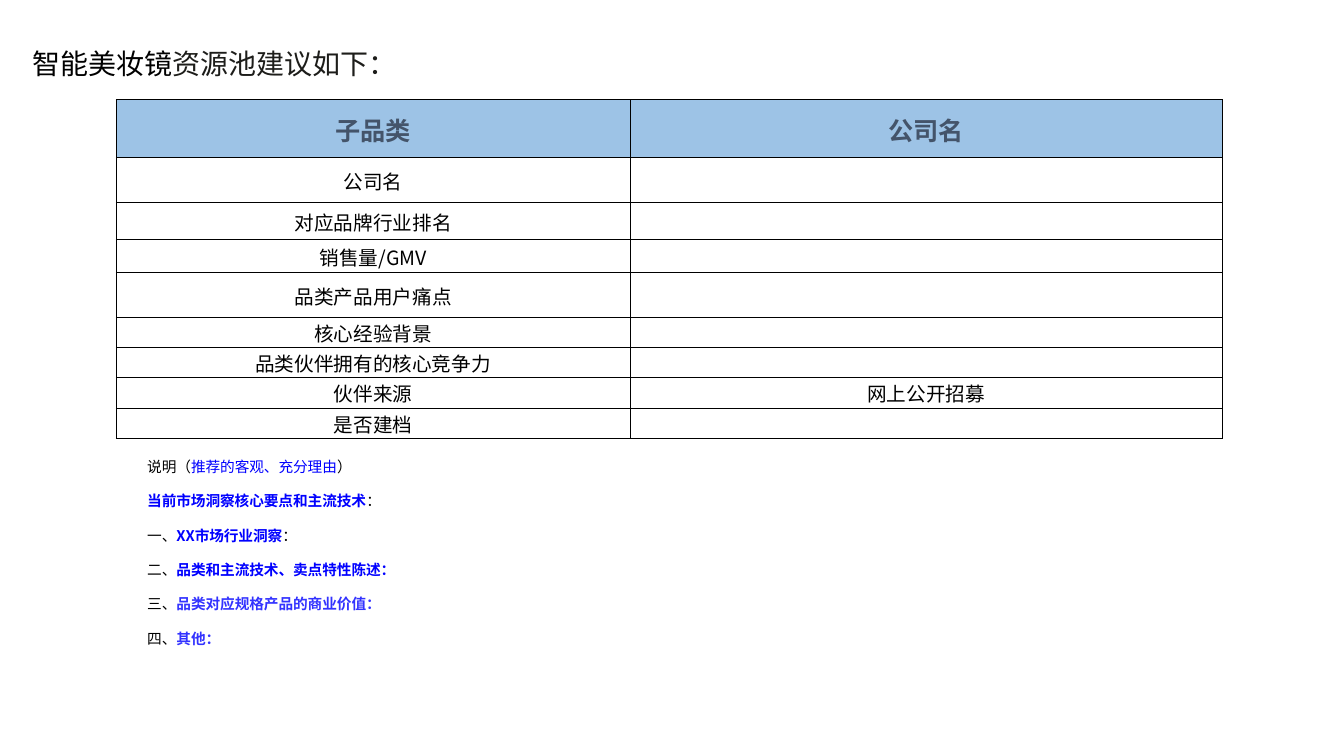
import dataclasses

import pptx
import pptx.dml.color
import pptx.enum.text
import pptx.oxml.ns
import pptx.util
from lxml import etree

Cm = pptx.util.Cm
Pt = pptx.util.Pt
qn = pptx.oxml.ns.qn
FONT = "Noto Sans CJK SC"
COLORS = {
    "black": "000000",
    "ink": "1D1D1A",
    "slate": "44546A",
    "sky": "9DC3E6",
    "white": "FFFFFF",
    "blue": "0000FF",
    "violet": "3333FF",
}


@dataclasses.dataclass
class Span:
    text: str
    color: str = "black"
    bold: bool = False


@dataclasses.dataclass
class Row:
    label: str
    height: float
    value: str = ""


ROWS = [
    Row("子品类", 1.46, "公司名"),
    Row("公司名", 1.14),
    Row("对应品牌行业排名", 0.93),
    Row("销售量/GMV", 0.83),
    Row("品类产品用户痛点", 1.14),
    Row("核心经验背景", 0.75),
    Row("品类伙伴拥有的核心竞争力", 0.75),
    Row("伙伴来源", 0.77, "网上公开招募"),
    Row("是否建档", 0.77),
]
NOTES = [
    [Span("说明（"), Span("推荐的客观、充分理由", "blue"), Span("）")],
    [Span("当前市场洞察核心要点和主流技术", "blue", True), Span("：")],
    [Span("一、"), Span("XX市场行业洞察", "blue", True), Span("：")],
    [Span("二、"), Span("品类和主流技术、卖点特性陈述：", "blue", True)],
    [Span("三、"), Span("品类对应规格产品的商业价值：", "violet", True)],
    [Span("四、"), Span("其他：", "violet", True)],
]


def rgb(name: str) -> pptx.dml.color.RGBColor:
    return pptx.dml.color.RGBColor.from_string(COLORS[name])


def set_font(p, size: float) -> None:
    p.font.size = Pt(size)
    p.font.name = FONT
    props = p._p.pPr.find(qn("a:defRPr"))
    etree.SubElement(props, qn("a:ea")).set("typeface", FONT)


def add_spans(p, spans: list[Span]) -> None:
    for span in spans:
        r = p.add_run()
        r.text = span.text
        r.font.color.rgb = rgb(span.color)
        r.font.bold = span.bold


def clear_margins(tf) -> None:
    tf.margin_left = tf.margin_right = tf.margin_top = tf.margin_bottom = 0
    tf.word_wrap = True


def add_borders(cell) -> None:
    props = cell._tc.get_or_add_tcPr()
    for side in ("lnL", "lnR", "lnT", "lnB"):
        line = etree.SubElement(props, qn(f"a:{side}"), w=str(Pt(0.5)))
        fill = etree.SubElement(line, qn("a:solidFill"))
        etree.SubElement(fill, qn("a:srgbClr"), val=COLORS["black"])


def fill_cell(cell, text: str, header: bool) -> None:
    cell.margin_left = cell.margin_right = cell.margin_top = Cm(0.03)
    cell.margin_bottom = 0
    cell.vertical_anchor = pptx.enum.text.MSO_ANCHOR.MIDDLE
    add_borders(cell)
    cell.fill.solid()
    cell.fill.fore_color.rgb = rgb("sky" if header else "white")
    p = cell.text_frame.paragraphs[0]
    p.alignment = pptx.enum.text.PP_ALIGN.CENTER
    set_font(p, 18 if header else 14)
    if text:
        add_spans(p, [Span(text, "slate" if header else "black", header)])


def add_title(s) -> None:
    title = s.shapes.title
    title.left, title.top = Cm(0.81), Cm(0.81)
    title.width, title.height = Cm(30.71), Cm(2.77)
    tf = title.text_frame
    clear_margins(tf)
    tf.auto_size = pptx.enum.text.MSO_AUTO_SIZE.NONE
    tf.vertical_anchor = pptx.enum.text.MSO_ANCHOR.TOP
    p = tf.paragraphs[0]
    p.alignment = pptx.enum.text.PP_ALIGN.LEFT
    p.line_spacing = Pt(34.3)
    set_font(p, 20)
    add_spans(p, [Span("智能美妆镜"), Span("资源池建议如下：", "ink")])


def add_resource_table(s) -> None:
    height = sum(row.height for row in ROWS)
    frame = s.shapes.add_table(len(ROWS), 2, Cm(2.93), Cm(2.51), Cm(27.87), Cm(height))
    table = frame.table
    table.first_row = table.horz_banding = False
    table.columns[0].width, table.columns[1].width = Cm(12.95), Cm(14.92)
    for i, row in enumerate(ROWS):
        table.rows[i].height = Cm(row.height)
        for j, text in enumerate((row.label, row.value)):
            fill_cell(table.cell(i, j), text, header=i == 0)


def add_notes(s) -> None:
    tf = s.shapes.add_textbox(Cm(3.51), Cm(11.53), Cm(27.28), Cm(5.72)).text_frame
    clear_margins(tf)
    for i, spans in enumerate(NOTES):
        p = tf.add_paragraph() if i else tf.paragraphs[0]
        p._p.get_or_add_pPr().set("marL", str(Cm(0.2)))
        p.space_before = Pt(6 if i else 0)
        p.space_after = Pt(6)
        set_font(p, 10.5)
        add_spans(p, spans)


def main() -> None:
    prs = pptx.Presentation()
    prs.slide_width, prs.slide_height = Cm(33.87), Cm(19.05)
    s = prs.slides.add_slide(prs.slide_layouts[5])
    add_title(s)
    add_resource_table(s)
    add_notes(s)
    prs.save("out.pptx")


if __name__ == "__main__":
    main()
